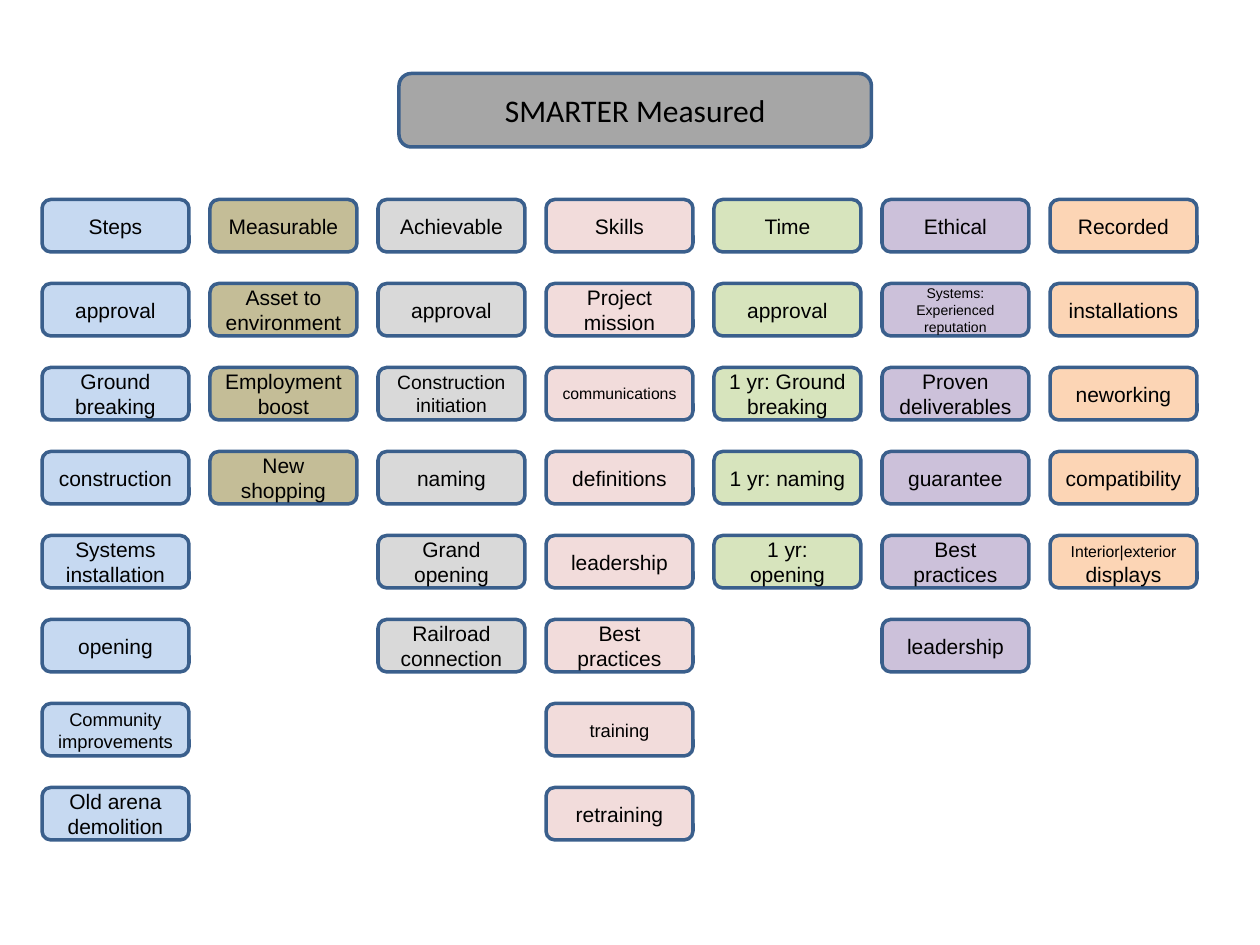
"""Build the SMARTER Measured slide: a title above seven coloured columns of boxes."""
from pptx import Presentation
from pptx.dml.color import RGBColor
from pptx.enum.shapes import MSO_SHAPE
from pptx.enum.text import MSO_ANCHOR, PP_ALIGN
from pptx.util import Inches, Pt

ROUNDED = MSO_SHAPE.ROUNDED_RECTANGLE
MIDDLE = MSO_ANCHOR.MIDDLE
CENTER = PP_ALIGN.CENTER

BLACK = RGBColor(0x00, 0x00, 0x00)
OUTLINE = RGBColor(0x3A, 0x5F, 0x8C)
TITLE_GRAY = RGBColor(0xA6, 0xA6, 0xA6)
BLUE = RGBColor(0xC6, 0xD9, 0xF1)
TAN = RGBColor(0xC4, 0xBD, 0x97)
GRAY = RGBColor(0xD9, 0xD9, 0xD9)
PINK = RGBColor(0xF2, 0xDC, 0xDB)
GREEN = RGBColor(0xD7, 0xE4, 0xBD)
PURPLE = RGBColor(0xCC, 0xC1, 0xDA)
ORANGE = RGBColor(0xFC, 0xD5, 0xB5)

deck = Presentation()
deck.slide_width, deck.slide_height = Inches(10), Inches(7.5)
page = deck.slides.add_slide(deck.slide_layouts[6])

UNIT = deck.slide_width // 120
LEFT, TOP = 4 * UNIT, 19 * UNIT
COLUMN_STEP, ROW_STEP = 16 * UNIT, 8 * UNIT
BOX_WIDTH, BOX_HEIGHT = 14 * UNIT, 5 * UNIT

COLUMNS = [
    (BLUE, ["Steps", "approval", "Ground breaking", "construction", "Systems installation",
            "opening", "Community improvements", "Old arena demolition"]),
    (TAN, ["Measurable", "Asset to environment", "Employment boost", "New shopping"]),
    (GRAY, ["Achievable", "approval", "Construction initiation", "naming", "Grand opening",
            "Railroad connection"]),
    (PINK, ["Skills", "Project mission", "communications", "definitions", "leadership",
            "Best practices", "training", "retraining"]),
    (GREEN, ["Time", "approval", "1 yr: Ground breaking", "1 yr: naming", "1 yr: opening"]),
    (PURPLE, ["Ethical", "Systems: Experienced reputation", "Proven deliverables",
              "guarantee", "Best practices", "leadership"]),
    (ORANGE, ["Recorded", "installations", "neworking", "compatibility", "Interior|exterior"]),
]
SMALL_SIZES = {
    "Community improvements": 10.5,
    "training": 10.5,
    "Construction initiation": 11,
    "communications": 9,
    "Systems: Experienced reputation": 8,
    "Interior|exterior": 9,
}


def add_span(para, text, size=12, font="Arial"):
    span = para.add_run()
    span.text = text
    span.font.size = Pt(size)
    span.font.name = font
    span.font.color.rgb = BLACK


def add_box(text, left, top, width=BOX_WIDTH, height=BOX_HEIGHT, fill=BLUE, **text_format):
    box = page.shapes.add_shape(ROUNDED, left, top, width, height)
    box.shadow.inherit = False
    box.fill.solid()
    box.fill.fore_color.rgb = fill
    box.line.color.rgb = OUTLINE
    box.line.width = Pt(2)
    box.text_frame.word_wrap = True
    box.text_frame.vertical_anchor = MIDDLE
    para = box.text_frame.paragraphs[0]
    para.alignment = CENTER
    add_span(para, text, **text_format)
    return para


add_box("SMARTER Measured", 38 * UNIT, 7 * UNIT, width=45 * UNIT, height=7 * UNIT,
        fill=TITLE_GRAY, size=18, font="Calibri")

for column, (color, labels) in enumerate(COLUMNS):
    for row, label in enumerate(labels):
        last_para = add_box(label, LEFT + column * COLUMN_STEP, TOP + row * ROW_STEP,
                            fill=color, size=SMALL_SIZES.get(label, 12))

add_span(last_para, " displays")

deck.save("out.pptx")
